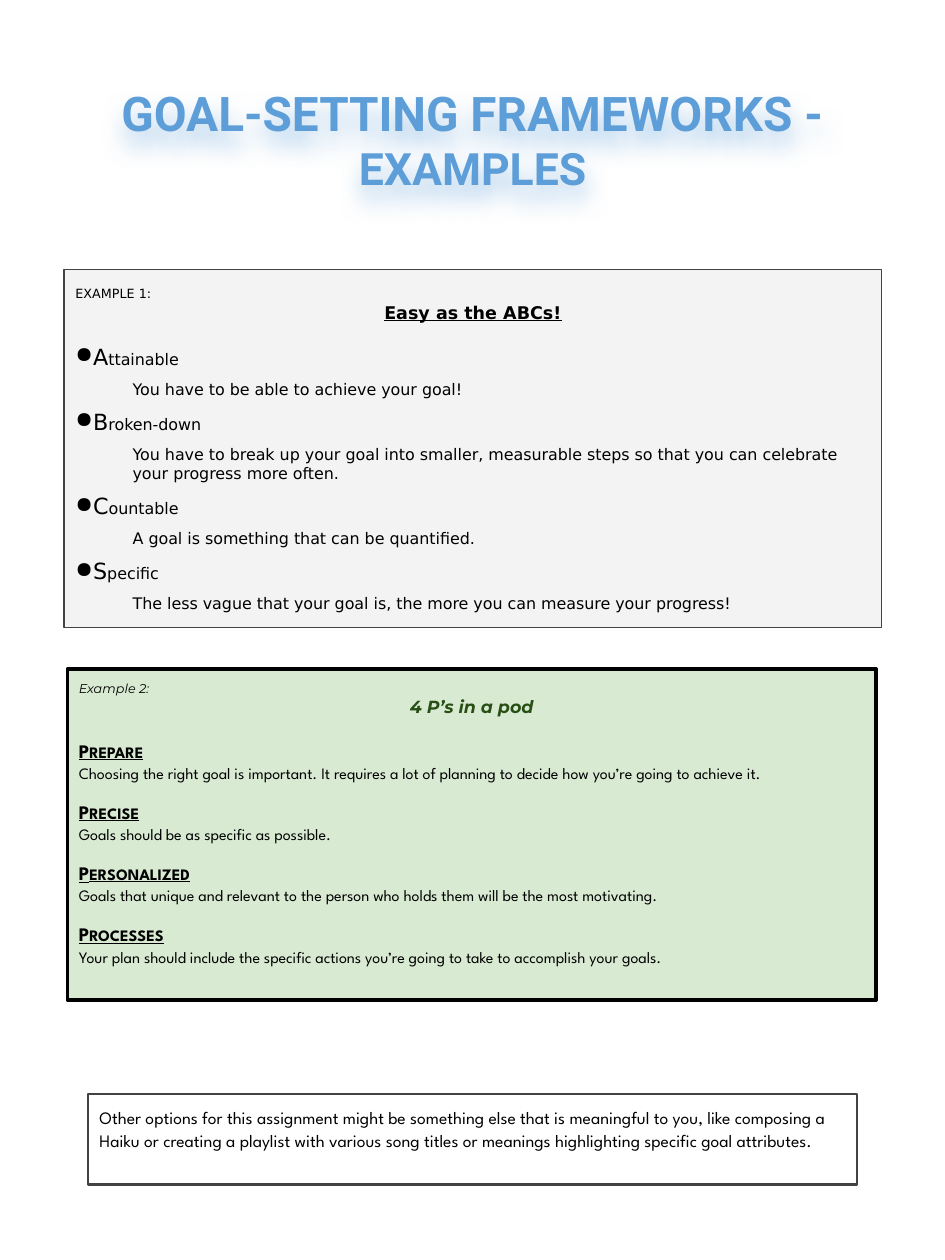
from lxml import etree
from pptx import Presentation
from pptx.dml.color import RGBColor
from pptx.enum.shapes import MSO_SHAPE
from pptx.enum.text import MSO_ANCHOR, MSO_AUTO_SIZE, PP_ALIGN
from pptx.oxml import parse_xml
from pptx.oxml.ns import nsdecls, qn
from pptx.util import Inches, Pt

COLORS = {
    "title": "5D9ED8", "text": "000000", "grey": "F3F3F3", "frame": "434343",
    "green": "D9EAD3", "dark_green": "274E13", "black": "000000",
}
SANS, SPARTAN, MONTSERRAT, ROBOTO = "DejaVu Sans", "League Spartan", "Montserrat", "Roboto"

# Each title part: text, size
TITLE = [("GOAL-SETTING FRAMEWORKS - ", 30), ("EXAMPLES", 28)]
ABCS = [
    ("Attainable", "You have to be able to achieve your goal!"),
    ("Broken-down", "You have to break up your goal into smaller, measurable steps "
                    "so that you can celebrate your progress more often."),
    ("Countable", "A goal is something that can be quantified."),
    ("Specific", "The less vague that your goal is, the more you can measure your progress!"),
]
FOUR_PS = [
    ("PREPARE", "Choosing the right goal is important. It requires a lot of planning "
                "to decide how you’re going to achieve it."),
    ("PRECISE", "Goals should be as specific as possible."),
    ("PERSONALIZED", "Goals that unique and relevant to the person who holds them "
                     "will be the most motivating."),
    ("PROCESSES", "Your plan should include the specific actions you’re going to take "
                  "to accomplish your goals."),
]
OTHER_OPTIONS = ("Other options for this assignment might be something else that is meaningful "
                 "to you, like composing a Haiku or creating a playlist with various song titles "
                 "or meanings highlighting specific goal attributes.")
HEADING_GAP = 13


def set_frame(frame, anchor=MSO_ANCHOR.TOP):
    frame.word_wrap = True
    frame.auto_size = MSO_AUTO_SIZE.NONE
    frame.vertical_anchor = anchor
    frame.margin_left = frame.margin_right = Inches(0.1)
    frame.margin_top = frame.margin_bottom = Inches(0.1)


def add_box(slide, left, top, width, height, line, weight, fill=None):
    box = slide.shapes.add_shape(MSO_SHAPE.RECTANGLE, Inches(left), Inches(top),
                                 Inches(width), Inches(height))
    box.shadow.inherit = False
    if fill:
        box.fill.solid()
        box.fill.fore_color.rgb = RGBColor.from_string(COLORS[fill])
    else:
        box.fill.background()
    box.line.color.rgb = RGBColor.from_string(COLORS[line])
    box.line.width = Pt(weight)
    set_frame(box.text_frame)
    return box.text_frame


def write(frame, parts, font, color="text", bold=False, italic=False, underline=False,
          align=PP_ALIGN.LEFT, before=0, after=0, spacing=1.0, indent=(0, 0), bullet=None):
    """Add one paragraph made of (text, size) parts; indent is (left, first line)."""
    first = frame.paragraphs[0]
    paragraph = frame.add_paragraph() if first.runs else first
    paragraph.alignment = align
    paragraph.space_before, paragraph.space_after = Pt(before), Pt(after)
    paragraph.line_spacing = spacing
    properties = paragraph._p.get_or_add_pPr()
    properties.set("marL", str(Inches(indent[0])))
    properties.set("indent", str(Inches(indent[1])))
    if bullet:
        etree.SubElement(properties, qn("a:buChar")).set("char", bullet)
    for text, size in parts:
        run = paragraph.add_run()
        run.text = text
        run.font.name, run.font.size = font, Pt(size)
        run.font.bold, run.font.italic, run.font.underline = bold, italic, underline
        run.font.color.rgb = RGBColor.from_string(COLORS[color])


def large_initial(term, initial_size):
    return [(term[0], initial_size), (term[1:], 10)]


def add_title(slide):
    title = slide.shapes.title
    title.left, title.top = Inches(0), Inches(0.51)
    title.width, title.height = Inches(8.25), Inches(1.41)
    set_frame(title.text_frame, MSO_ANCHOR.MIDDLE)
    write(title.text_frame, TITLE, ROBOTO, color="title", bold=True, align=PP_ALIGN.CENTER)
    title._element.spPr.append(parse_xml(
        f'<a:effectLst {nsdecls("a")}><a:outerShdw blurRad="{Inches(0.2)}" dist="{Inches(0.12)}" '
        f'dir="5400000" algn="bl" rotWithShape="0"><a:srgbClr val="{COLORS["title"]}">'
        '<a:alpha val="50000"/></a:srgbClr></a:outerShdw></a:effectLst>'))


def add_abcs(slide):
    frame = add_box(slide, 0.56, 2.35, 7.14, 3.13, "frame", 0.75, "grey")
    write(frame, [("EXAMPLE 1:", 8), (" ", 11)], SANS)
    write(frame, [("Easy as the ABCs!", 11)], SANS, bold=True, underline=True,
          align=PP_ALIGN.CENTER)
    for number, (term, meaning) in enumerate(ABCS):
        write(frame, large_initial(term, 14), SANS, before=6 if number else HEADING_GAP,
              indent=(0.12, -0.13), bullet="●")
        write(frame, [(meaning, 10)], SANS, before=6, indent=(0.5, 0))


def add_four_ps(slide):
    frame = add_box(slide, 0.59, 5.84, 7.06, 2.89, "black", 2.25, "green")
    write(frame, [("Example 2:", 8)], MONTSERRAT, italic=True)
    write(frame, [("4 P’s in a pod", 11)], MONTSERRAT, color="dark_green", bold=True,
          italic=True, align=PP_ALIGN.CENTER)
    for number, (term, meaning) in enumerate(FOUR_PS):
        write(frame, large_initial(term, 12), SPARTAN, bold=True, underline=True,
              before=10 if number else HEADING_GAP, spacing=1.08)
        write(frame, [(meaning, 10)], SPARTAN, spacing=1.08)


def main():
    presentation = Presentation()
    presentation.slide_width, presentation.slide_height = Inches(8.25), Inches(11)
    slide = presentation.slides.add_slide(presentation.slide_layouts[5])
    add_title(slide)
    add_abcs(slide)
    add_four_ps(slide)
    options = add_box(slide, 0.77, 9.55, 6.71, 0.79, "frame", 1.5)
    write(options, [(OTHER_OPTIONS, 11)], SPARTAN, spacing=1.08)
    presentation.save("out.pptx")


if __name__ == "__main__":
    main()
